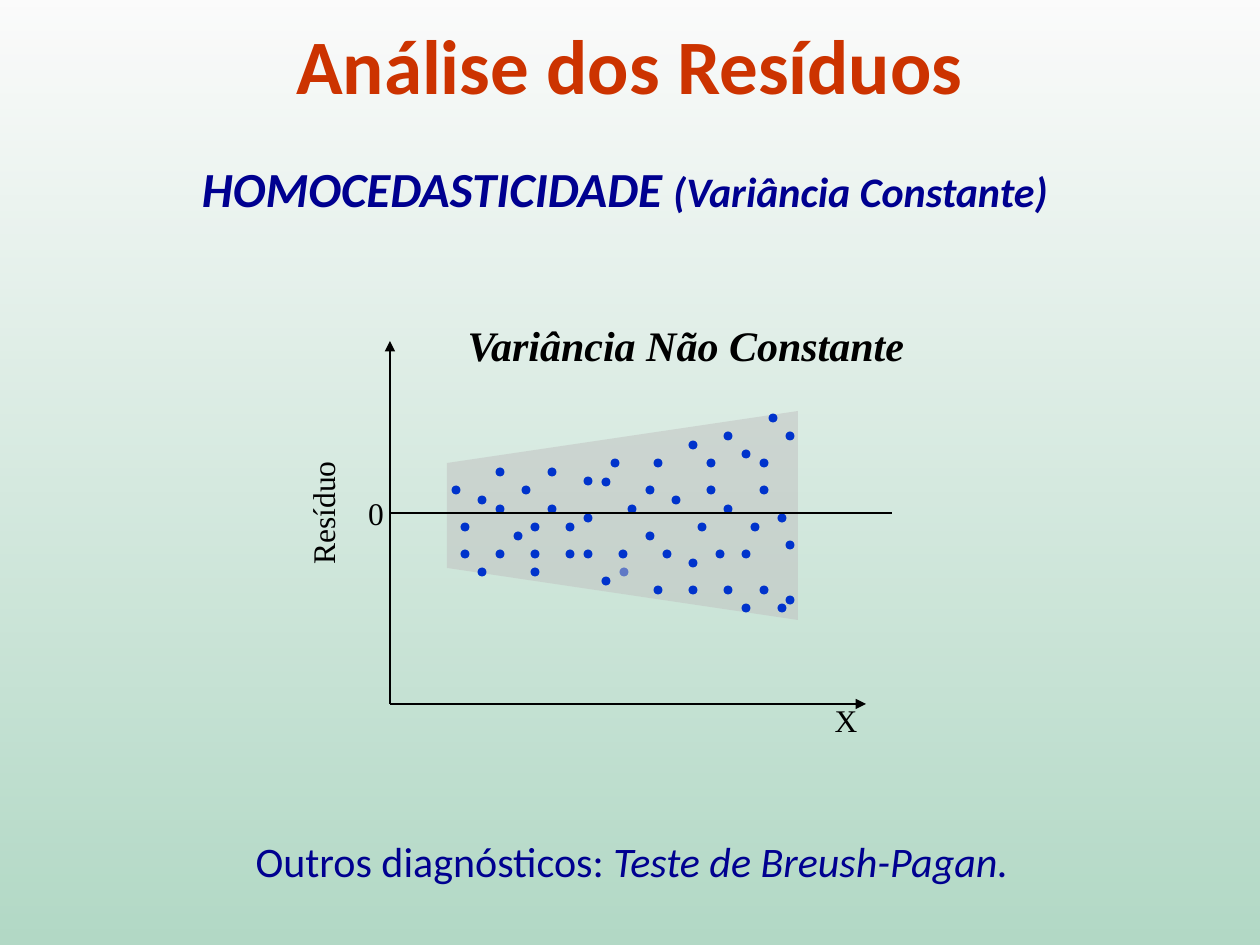
"""Builds the slide on residual analysis with a scatter of non-constant variance."""
from lxml.etree import SubElement
from pptx import Presentation
from pptx.dml.color import RGBColor
from pptx.enum.shapes import MSO_CONNECTOR, MSO_SHAPE
from pptx.enum.text import PP_ALIGN
from pptx.oxml.ns import qn
from pptx.util import Pt

PIXEL = 914400 / 126
WIDTH, HEIGHT = 1260, 945
DOT_SIZE = 9
AXIS_LEFT, AXIS_TOP, AXIS_BOTTOM, AXIS_RIGHT = 390, 341, 704, 866
ZERO_LEVEL, ZERO_RIGHT = 513, 892
BAND_LEFT, BAND_RIGHT = 447, 798
BAND_START_TOP, BAND_START_BOTTOM = 463, 568
BAND_END_TOP, BAND_END_BOTTOM = 411, 620
HEADING_FONT, CHART_FONT = "Calibri", "Times New Roman"
NAVY = RGBColor(0x00, 0x00, 0x90)
RED = RGBColor(0xCC, 0x33, 0x00)
BLUE = RGBColor(0x00, 0x33, 0xCC)
GRAY = RGBColor(0xC0, 0xC0, 0xC0)
PALE = RGBColor(0xF2, 0xF2, 0xF2)
GREEN = RGBColor(0x00, 0x80, 0x40)
BLACK = RGBColor(0x00, 0x00, 0x00)
WHITE = RGBColor(0xFF, 0xFF, 0xFF)


def px(*lengths):
    return [round(length * PIXEL) for length in lengths]


def add_dot(center_x, center_y):
    left, top = center_x - DOT_SIZE / 2, center_y - DOT_SIZE / 2
    dot = page.shapes.add_shape(MSO_SHAPE.FLOWCHART_CONNECTOR, *px(left, top, DOT_SIZE, DOT_SIZE))
    dot.shadow.inherit = False
    dot.fill.solid()
    dot.fill.fore_color.rgb = BLUE
    dot.line.fill.background()


deck = Presentation()
deck.slide_width, deck.slide_height = px(WIDTH, HEIGHT)
page = deck.slides.add_slide(deck.slide_layouts[6])
page.background.fill.solid()
page.background.fill.fore_color.rgb = WHITE

backdrop = page.shapes.add_shape(MSO_SHAPE.RECTANGLE, *px(0, 0, WIDTH, HEIGHT))
backdrop.shadow.inherit = False
backdrop.line.fill.background()
backdrop.fill.gradient()
backdrop.fill.gradient_angle = 90
for stop, color in zip(backdrop.fill.gradient_stops, (GREEN, PALE)):
    stop.color.rgb = color
for tint in backdrop._element.spPr.iter(qn("a:srgbClr")):
    SubElement(tint, qn("a:alpha"), val="30000")

add_dot(624, 572)

outline = page.shapes.build_freeform(BAND_LEFT, BAND_START_TOP, scale=PIXEL)
outline.add_line_segments([
    (BAND_RIGHT, BAND_END_TOP),
    (BAND_RIGHT, BAND_END_BOTTOM),
    (BAND_LEFT, BAND_START_BOTTOM),
], close=True)
band = outline.convert_to_shape()
band.shadow.inherit = False
band.fill.solid()
band.fill.fore_color.rgb = GRAY
band.line.fill.background()
SubElement(band._element.spPr.find(".//" + qn("a:srgbClr")), qn("a:alpha"), val="50000")

residuals_by_x = {
    456: [490], 465: [527, 554], 482: [500, 572], 500: [472, 509, 554],
    518: [536], 526: [490], 535: [527, 554, 572], 552: [472, 509],
    570: [527, 554], 588: [481, 518, 554], 606: [482, 581], 615: [463],
    623: [554], 632: [509], 650: [490, 536], 658: [463, 590],
    667: [554], 676: [500], 693: [445, 563, 590], 702: [527],
    711: [463, 490], 720: [554], 728: [436, 509, 590], 746: [454, 554, 608],
    755: [527], 764: [463, 490, 590], 773: [418], 782: [518, 608],
    790: [436, 545, 600],
}
for x, residuals in residuals_by_x.items():
    for y in residuals:
        add_dot(x, y)

axes = [
    ((AXIS_LEFT, ZERO_LEVEL, ZERO_RIGHT, ZERO_LEVEL), False),
    ((AXIS_LEFT, AXIS_BOTTOM, AXIS_LEFT, AXIS_TOP), True),
    ((AXIS_LEFT, AXIS_BOTTOM, AXIS_RIGHT, AXIS_BOTTOM), True),
]
for ends, has_arrow in axes:
    axis = page.shapes.add_connector(MSO_CONNECTOR.STRAIGHT, *px(*ends))
    axis.line.color.rgb = BLACK
    axis.line.width = Pt(0.75)
    if has_arrow:
        SubElement(axis.line._get_or_add_ln(), qn("a:tailEnd"), type="triangle")
    SubElement(axis._element.spPr, qn("a:effectLst"))

title = [("Análise dos Resíduos", 44, True, False)]
subtitle = [("HOMOCEDASTICIDADE ", 28, True, True), ("(Variância Constante)", 24, True, True)]
footer = [("Outros diagnósticos: ", 24, False, False), ("Teste de Breush-Pagan.", 24, False, True)]
chart_title = [("Variância Não Constante", 24, True, True)]
zero_label = [("0", 18, False, False)]
x_label = [("X", 18, False, False)]
y_label = [("Resíduo", 18, False, False)]

texts = [
    (title, (0, 11, WIDTH, 106), HEADING_FONT, RED, True, 0, 1.0),
    (subtitle, (38, 141, 1174, 82), HEADING_FONT, NAVY, True, 0, 1.2),
    (footer, (51, 829, 1162, 159), HEADING_FONT, NAVY, True, 0, 1.0),
    (chart_title, (446, 313, 480, 63), CHART_FONT, BLACK, False, 0, 1.0),
    (zero_label, (355, 488, 42, 50), CHART_FONT, BLACK, False, 0, 1.0),
    (x_label, (822, 695, 48, 50), CHART_FONT, BLACK, False, 0, 1.0),
    (y_label, (243, 488, 159, 50), CHART_FONT, BLACK, True, 270, 1.0),
]
for spans, frame, font, color, wrap, turn, spacing in texts:
    box = page.shapes.add_textbox(*px(*frame))
    box.rotation = turn
    box.text_frame.word_wrap = wrap
    para = box.text_frame.paragraphs[0]
    para.alignment = PP_ALIGN.CENTER
    para.line_spacing = spacing
    for words, size, bold, italic in spans:
        span = para.add_run()
        span.text = words
        span.font.name = font
        span.font.size = Pt(size)
        span.font.bold = bold
        span.font.italic = italic
        span.font.color.rgb = color

deck.save("out.pptx")
